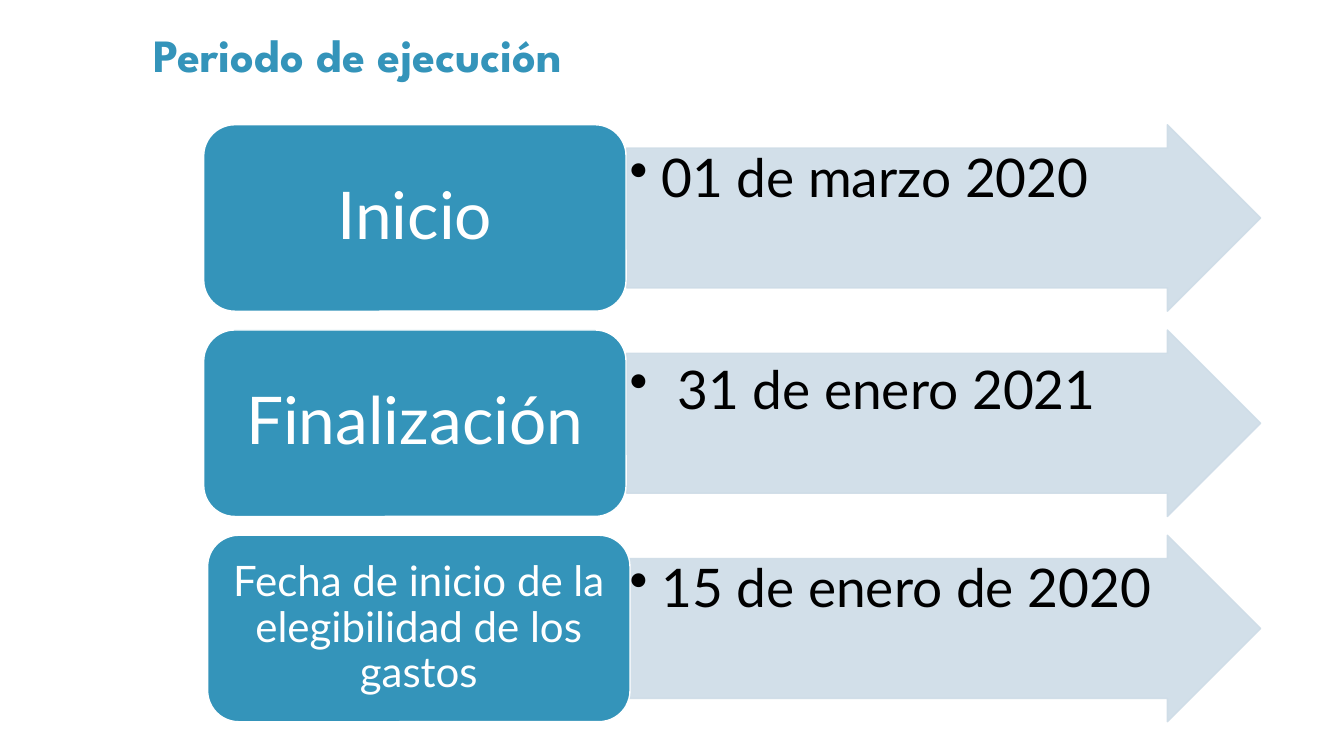
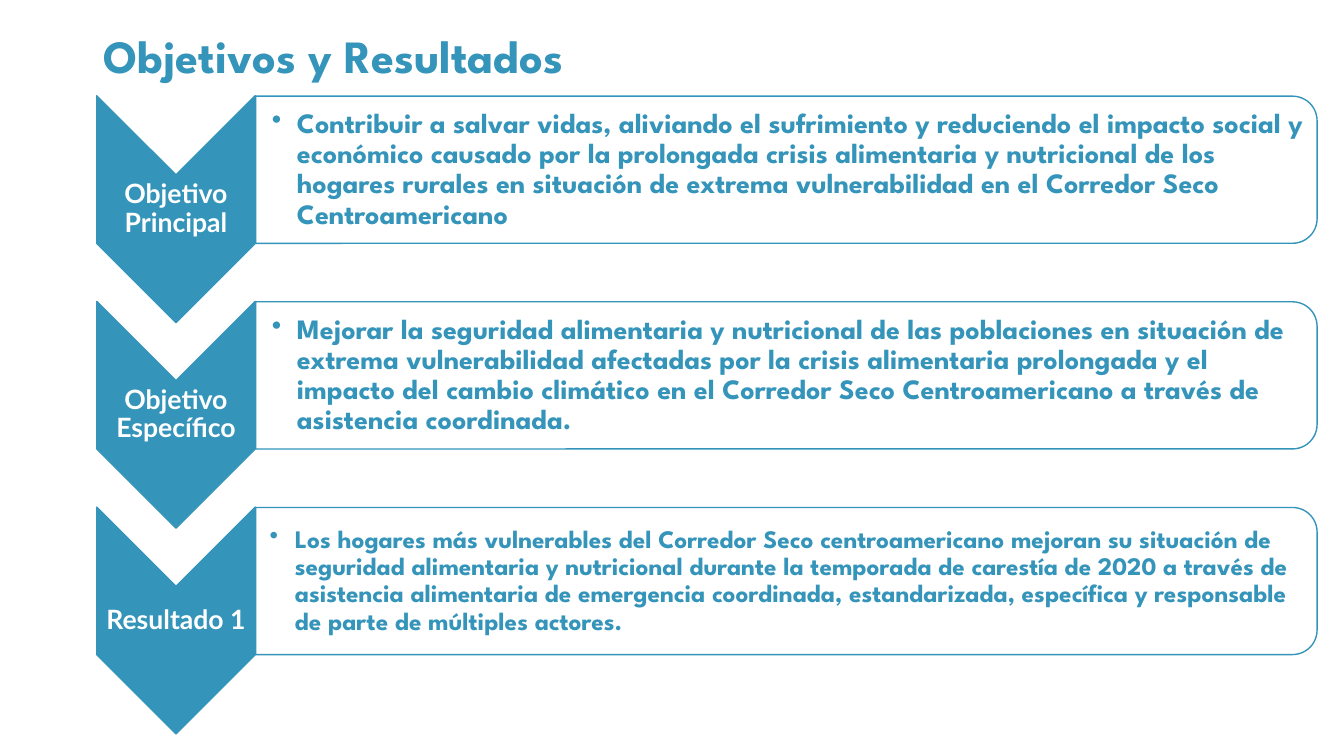
from pptx import Presentation
from pptx.dml.color import RGBColor
from pptx.enum.shapes import MSO_SHAPE
from pptx.enum.text import MSO_ANCHOR, PP_ALIGN
from pptx.oxml.ns import qn
from pptx.util import Pt
from lxml.etree import SubElement

COLORS = {"blue": "3494BA", "pale": "CEDCE7", "white": "FFFFFF", "black": "000000"}
TITLE = {"name": "League Spartan", "size": Pt(33), "bold": True}
DATE = {"name": "Lato", "size": Pt(38)}
LABEL = {"name": "Lato", "size": Pt(19), "bold": True}

PERIODS = [
    # label, label size, label insets, box left, date, date indent, line spacing
    ("Inicio", 47, (14.4, 7.2), 145.5, "01 de marzo 2020", 22.5, 0.9),
    ("Finalización", 47, (14.4, 7.2), 145.5, "31 de enero 2021", 34, 1),
    ("Fecha de inicio de la elegibilidad de los gastos", 30, (8.6, 4.3), 148.3,
     "15 de enero de 2020", 22.5, 0.9),
]

GOALS = [
    # label, text, text size, left inset
    ("Objetivo Principal",
     "Contribuir a salvar vidas, aliviando el sufrimiento y reduciendo el impacto social y "
     "económico causado por la prolongada crisis alimentaria y nutricional de los hogares "
     "rurales en situación de extrema vulnerabilidad en el Corredor Seco Centroamericano",
     20, 11.5),
    ("Objetivo Específico",
     "Mejorar la seguridad alimentaria y nutricional de las poblaciones en situación de "
     "extrema vulnerabilidad afectadas por la crisis alimentaria prolongada y el impacto del "
     "cambio climático en el Corredor Seco Centroamericano a través de asistencia coordinada.",
     20, 11.5),
    ("Resultado 1",
     "Los hogares más vulnerables del Corredor Seco centroamericano mejoran su situación de "
     "seguridad alimentaria y nutricional durante la temporada de carestía de 2020 a través "
     "de asistencia alimentaria de emergencia coordinada, estandarizada, específica y "
     "responsable de parte de múltiples actores.",
     18, 10),
]


class Deck:
    def __init__(self):
        self.presentation = Presentation()
        self.presentation.slide_width = Pt(960)
        self.presentation.slide_height = Pt(540)
        self.slide = None

    def new_slide(self, title, left, top):
        self.slide = self.presentation.slides.add_slide(self.presentation.slide_layouts[6])
        shape = self.shape(MSO_SHAPE.ROUNDED_RECTANGLE, left, top, 482.4, 58.3)
        self.set_text(shape, title, TITLE, "blue", (7.2, 3.6, 7.2, 3.6), spacing=1)

    def shape(self, kind, left, top, width, height, fill=None, line=None):
        shape = self.slide.shapes.add_shape(kind, Pt(left), Pt(top), Pt(width), Pt(height))
        shape.shadow.inherit = False
        if fill:
            shape.fill.solid()
            shape.fill.fore_color.rgb = RGBColor.from_string(COLORS[fill])
        else:
            shape.fill.background()
        if line:
            shape.line.color.rgb = RGBColor.from_string(COLORS[line])
            shape.line.width = Pt(1)
        else:
            shape.line.fill.background()
        return shape

    def turned_shape(self, kind, left, top, width, height, fill, line):
        """Add a shape turned by 90 degrees that covers the given area."""
        shift = (width - height) / 2
        shape = self.shape(kind, left + shift, top - shift, height, width, fill, line)
        shape.rotation = 90

    def arrow(self, left, top, width, height):
        shape = self.shape(MSO_SHAPE.RIGHT_ARROW, left, top, width, height, "pale", "pale")
        shape.adjustments[0] = 0.75
        for color in shape.element.spPr.iter(qn("a:srgbClr")):
            SubElement(color, qn("a:alpha"), val="90000")
        return shape

    def text_box(self, left, top, width, height, *text, **options):
        box = self.slide.shapes.add_textbox(Pt(left), Pt(top), Pt(width), Pt(height))
        self.set_text(box, *text, **options)

    def set_text(self, shape, text, font, color, insets, spacing=0.9,
                 anchor=MSO_ANCHOR.MIDDLE, indent=None):
        """Fill a shape with one paragraph, bulleted if an indent is given."""
        frame = shape.text_frame
        sides = ("margin_left", "margin_top", "margin_right", "margin_bottom")
        layout = dict(zip(sides, map(Pt, insets)), word_wrap=True, vertical_anchor=anchor)
        for name, value in layout.items():
            setattr(frame, name, value)
        paragraph = frame.paragraphs[0]
        paragraph.alignment = PP_ALIGN.LEFT if indent else PP_ALIGN.CENTER
        paragraph.line_spacing = float(spacing)
        if indent:
            self.bullet(paragraph, indent)
        run = paragraph.add_run()
        run.text = text
        for name, value in font.items():
            setattr(run.font, name, value)
        run.font.color.rgb = RGBColor.from_string(COLORS[color])

    def bullet(self, paragraph, indent):
        properties = paragraph._p.get_or_add_pPr()
        properties.set("marL", str(Pt(indent)))
        properties.set("indent", str(-Pt(indent)))
        SubElement(properties, qn("a:buChar"), char="•")

    def period(self, top, label, size, insets, left, date, indent, spacing):
        arrow = self.arrow(447.6, top, 452.9, 133.2)
        self.set_text(arrow, date, DATE, "black", (2.2,) * 4, spacing, MSO_ANCHOR.TOP, indent)
        box = self.shape(MSO_SHAPE.ROUNDED_RECTANGLE, left, top, 301.7, 133.2, "blue", "white")
        self.set_text(box, label, {"name": "Lato", "size": Pt(size)}, "white", insets * 2)

    def goal(self, top, label, text, size, inset):
        chevron = (69.1, top, 113.2, 162)
        self.turned_shape(MSO_SHAPE.CHEVRON, *chevron, "blue", "blue")
        self.text_box(*chevron, label, LABEL, "white", (0.7,) * 4)
        self.turned_shape(MSO_SHAPE.ROUND_2_SAME_RECTANGLE, 182.6, top + 0.3, 758.2, 105.1,
                          "white", "blue")
        font = {"name": "League Spartan", "size": Pt(size), "bold": True}
        self.text_box(182.6, top + 0.3, 753.3, 105.1, text, font, "blue",
                      (inset, 0.7, 0.7, 0.7), indent=18)


def main():
    deck = Deck()
    deck.new_slide("Periodo de ejecución", 14.4, 9.4)
    for row, period in enumerate(PERIODS):
        deck.period(89.1 + row * 146.6, *period)
    deck.new_slide("Objetivos y Resultados", -2.9, 10.1)
    for row, goal in enumerate(GOALS):
        deck.goal(68.4 + row * 146.9, *goal)
    deck.presentation.save("out.pptx")


if __name__ == "__main__":
    main()
